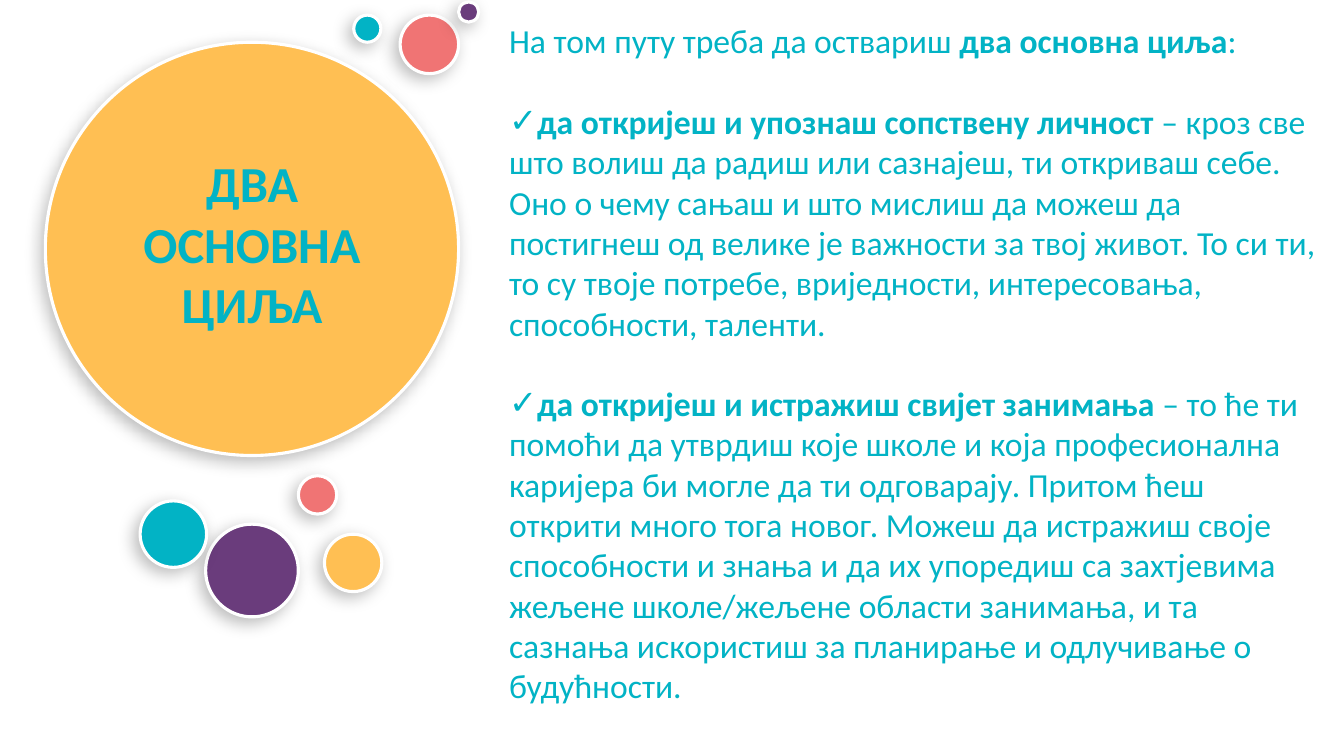
from dataclasses import dataclass

from lxml import etree
from pptx import Presentation
from pptx.dml.color import RGBColor
from pptx.enum.shapes import MSO_SHAPE
from pptx.enum.text import MSO_ANCHOR, MSO_AUTO_SIZE, PP_ALIGN
from pptx.oxml import parse_xml
from pptx.oxml.ns import nsdecls, qn
from pptx.util import Pt

OVAL = MSO_SHAPE.OVAL
TOP = MSO_ANCHOR.TOP
FIXED = MSO_AUTO_SIZE.NONE
LEFT, CENTER = PP_ALIGN.LEFT, PP_ALIGN.CENTER


@dataclass(frozen=True)
class Theme:
    teal: str = "02B3C5"
    plum: str = "6A3C7C"
    gold: str = "FFBF53"
    coral: str = "F07474"
    white: str = "FFFFFF"
    font: str = "Calibri"
    head: int = 36
    text: int = 24
    gap: float = 28.8
    edge: float = 2.25


THEME = Theme()
SIZE = (960, 540)

TITLE = "ДВА ОСНОВНА ЦИЉА"
TITLE_BOX = (63.4, 105.1, 233.3, 164.9)
BODY_BOX = (356.4, 10.8, 594, 529.2)

BODY = [
    (False, [
        ("На том путу треба да оствариш ", False),
        ("два основна циља", True),
        (":", False),
    ]),
    (True, [
        ("да откријеш и упознаш сопствену личност ", True),
        ("– кроз све што волиш да радиш или сазнајеш, ти откриваш себе. "
         "Оно о чему сањаш и што мислиш да можеш да постигнеш од велике је "
         "важности за твој живот. То си ти, то су твоје потребе, вриједности, "
         "интересовања, способности, таленти.", False),
    ]),
    (True, [
        ("да откријеш и истражиш свијет занимања", True),
        (" – то ће ти помоћи да утврдиш које школе и која професионална "
         "каријера би могле да ти одговарају. Притом ћеш открити много тога "
         "новог. Можеш да истражиш своје способности и знања и да их упоредиш "
         "са захтјевима жељене школе/жељене области занимања, и та сазнања "
         "искористиш за планирање и одлучивање о будућности.", False),
    ]),
]

DOTS = [
    (146.9, 374.4, 66.2, THEME.plum),
    (231.8, 381.6, 41, THEME.gold),
    (213.1, 339.8, 27.4, THEME.coral),
    (32.4, 30.2, 295.2, THEME.gold),
    (100.1, 357.8, 47.5, THEME.teal),
    (285.8, 10.8, 41.8, THEME.coral),
    (252.7, 10.8, 19.4, THEME.teal),
    (327.6, 1.4, 14.4, THEME.plum),
]

SHADE = (
    f'<a:outerShdw {nsdecls("a")} blurRad="{Pt(12)}" dist="{Pt(5)}" '
    'dir="8100000" algn="tr" rotWithShape="0">'
    '<a:srgbClr val="000000"><a:alpha val="26000"/></a:srgbClr></a:outerShdw>'
)


def color(code):
    return RGBColor.from_string(code)


def place(shape, box):
    shape.left, shape.top, shape.width, shape.height = map(Pt, box)
    frame = shape.text_frame
    frame.word_wrap = True
    frame.auto_size = FIXED
    frame.vertical_anchor = TOP
    return frame


def style(para, size, align):
    para.alignment = align
    para.font.name = THEME.font
    para.font.size = Pt(size)
    para.font.color.rgb = color(THEME.teal)


def add_dot(slide, left, top, size, fill):
    dot = slide.shapes.add_shape(OVAL, Pt(left), Pt(top), Pt(size), Pt(size))
    dot.fill.solid()
    dot.fill.fore_color.rgb = color(fill)
    dot.line.color.rgb = color(THEME.white)
    dot.line.width = Pt(THEME.edge)
    dot.shadow.inherit = False
    dot.element.spPr.find(qn("a:effectLst")).append(parse_xml(SHADE))


def set_mark(para, ticked):
    props = para._p.get_or_add_pPr()
    props.set("marL", "0")
    props.set("indent", "0")
    if ticked:
        etree.SubElement(props, qn("a:buChar")).set("char", "✓")
    else:
        etree.SubElement(props, qn("a:buNone"))


def add_title(slide):
    title = slide.shapes.title
    frame = place(title, TITLE_BOX)
    frame.text = TITLE
    para = frame.paragraphs[0]
    style(para, THEME.head, CENTER)
    para.font.bold = True
    title.element.getparent().append(title.element)


def add_body(slide):
    frame = place(slide.placeholders[1], BODY_BOX)
    for index, (ticked, runs) in enumerate(BODY):
        para = frame.add_paragraph() if index else frame.paragraphs[0]
        set_mark(para, ticked)
        style(para, THEME.text, LEFT)
        para.space_before = Pt(THEME.gap if index else 0)
        for words, bold in runs:
            run = para.add_run()
            run.text = words
            run.font.bold = bold


def main():
    deck = Presentation()
    deck.slide_width, deck.slide_height = map(Pt, SIZE)
    slide = deck.slides.add_slide(deck.slide_layouts[1])
    for dot in DOTS:
        add_dot(slide, *dot)
    add_title(slide)
    add_body(slide)
    deck.save("out.pptx")


if __name__ == "__main__":
    main()
